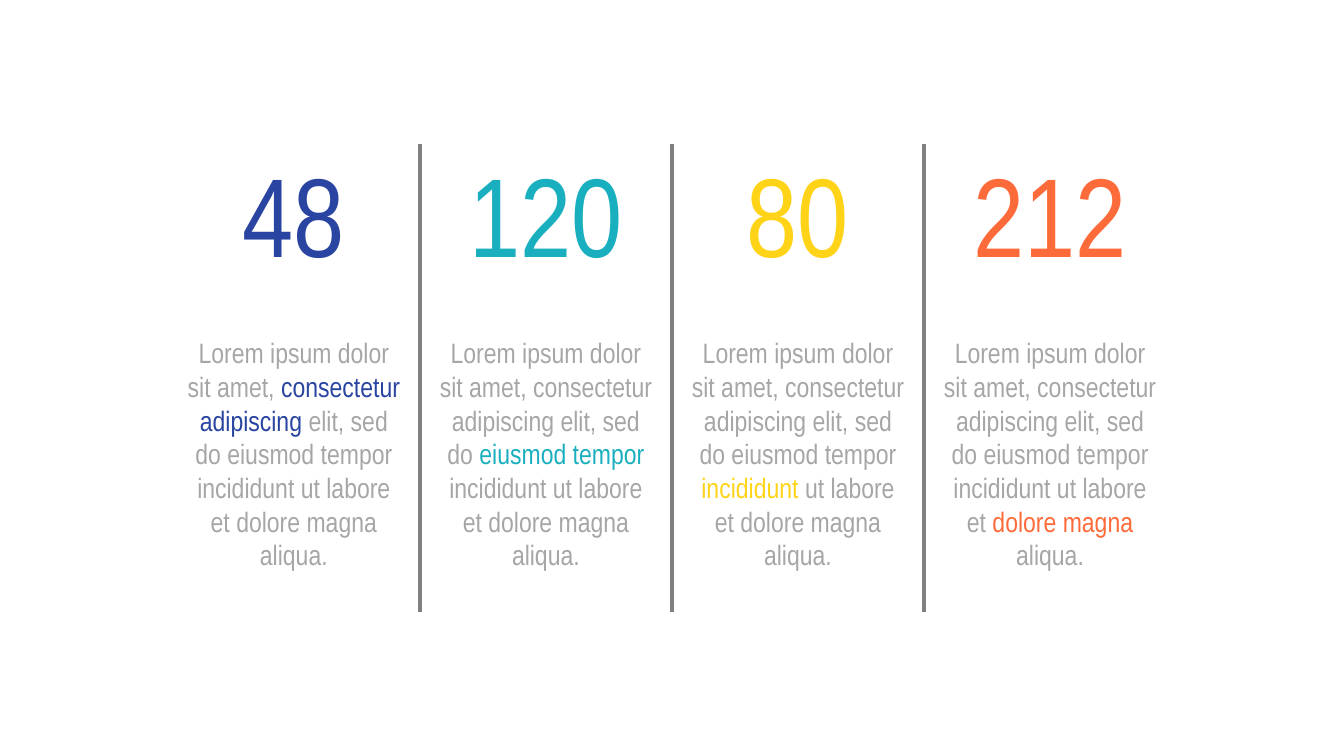
from lxml.etree import SubElement
from pptx import Presentation
from pptx.dml.color import RGBColor
from pptx.enum.shapes import MSO_CONNECTOR
from pptx.enum.text import MSO_ANCHOR, MSO_AUTO_SIZE, PP_ALIGN
from pptx.oxml.ns import qn
from pptx.util import Inches, Pt

FONT = "Arial Narrow"
GREY = "A6A6A6"
DIVIDER_GREY = "808080"
BODY = ("Lorem ipsum dolor sit amet, consectetur adipiscing elit, sed do "
        "eiusmod tempor incididunt ut labore et dolore magna aliqua.")
STATISTICS = [
    ("48", "2944A1", "consectetur adipiscing "),
    ("120", "19AFBF", "eiusmod tempor "),
    ("80", "FFD418", "incididunt "),
    ("212", "FE6B3A", "dolore magna "),
]
SLIDE_WIDTH, SLIDE_HEIGHT = 13.33, 7.5
COLUMN_WIDTH = 2.5
LEFT = (SLIDE_WIDTH - len(STATISTICS) * COLUMN_WIDTH) / 2
TOP, HEIGHT = 1.38, 4.69


def color(hex_string):
    return RGBColor.from_string(hex_string)


def add_text(slide, left, top, width, height, runs, size, side_inset=0.1):
    """Add a centred paragraph made of (text, colour) runs."""
    box = slide.shapes.add_textbox(
        Inches(left), Inches(top), Inches(width), Inches(height))
    frame = box.text_frame
    frame.word_wrap = True
    frame.auto_size = MSO_AUTO_SIZE.SHAPE_TO_FIT_TEXT
    frame.vertical_anchor = MSO_ANCHOR.MIDDLE
    frame.margin_left = frame.margin_right = Inches(side_inset)
    paragraph = frame.paragraphs[0]
    paragraph.alignment = PP_ALIGN.CENTER
    paragraph.font.name = FONT
    paragraph.font.size = Pt(size)
    for text, run_color in runs:
        run = paragraph.add_run()
        run.text = text
        run.font.color.rgb = color(run_color)


def add_divider(slide, x, top, bottom):
    line = slide.shapes.add_connector(
        MSO_CONNECTOR.STRAIGHT, Inches(x), Inches(top), Inches(x), Inches(bottom))
    line.line.color.rgb = color(DIVIDER_GREY)
    line.line.width = Pt(2.25)
    SubElement(line._element.spPr, qn("a:effectLst"))


def add_statistic(slide, left, top, width, number, accent, highlight):
    """Place a large number above a text with one highlighted phrase."""
    before, after = BODY.split(highlight)
    add_text(slide, left, top, width, 1.45, [(number, accent)], 80)
    add_text(slide, left, top + 1.89, width, 2.46,
             [(before, GREY), (highlight, accent), (after, GREY)], 20, 0.19)


def add_statistics(slide, left, top, column_width, height):
    for index, statistic in enumerate(STATISTICS):
        x = left + index * column_width
        if index:
            add_divider(slide, x, top + 0.05, top + height)
        add_statistic(slide, x, top, column_width, *statistic)


def main():
    presentation = Presentation()
    presentation.slide_width = Inches(SLIDE_WIDTH)
    presentation.slide_height = Inches(SLIDE_HEIGHT)
    slide = presentation.slides.add_slide(presentation.slide_layouts[6])
    add_statistics(slide, LEFT, TOP, COLUMN_WIDTH, HEIGHT)
    presentation.save("out.pptx")


if __name__ == "__main__":
    main()
